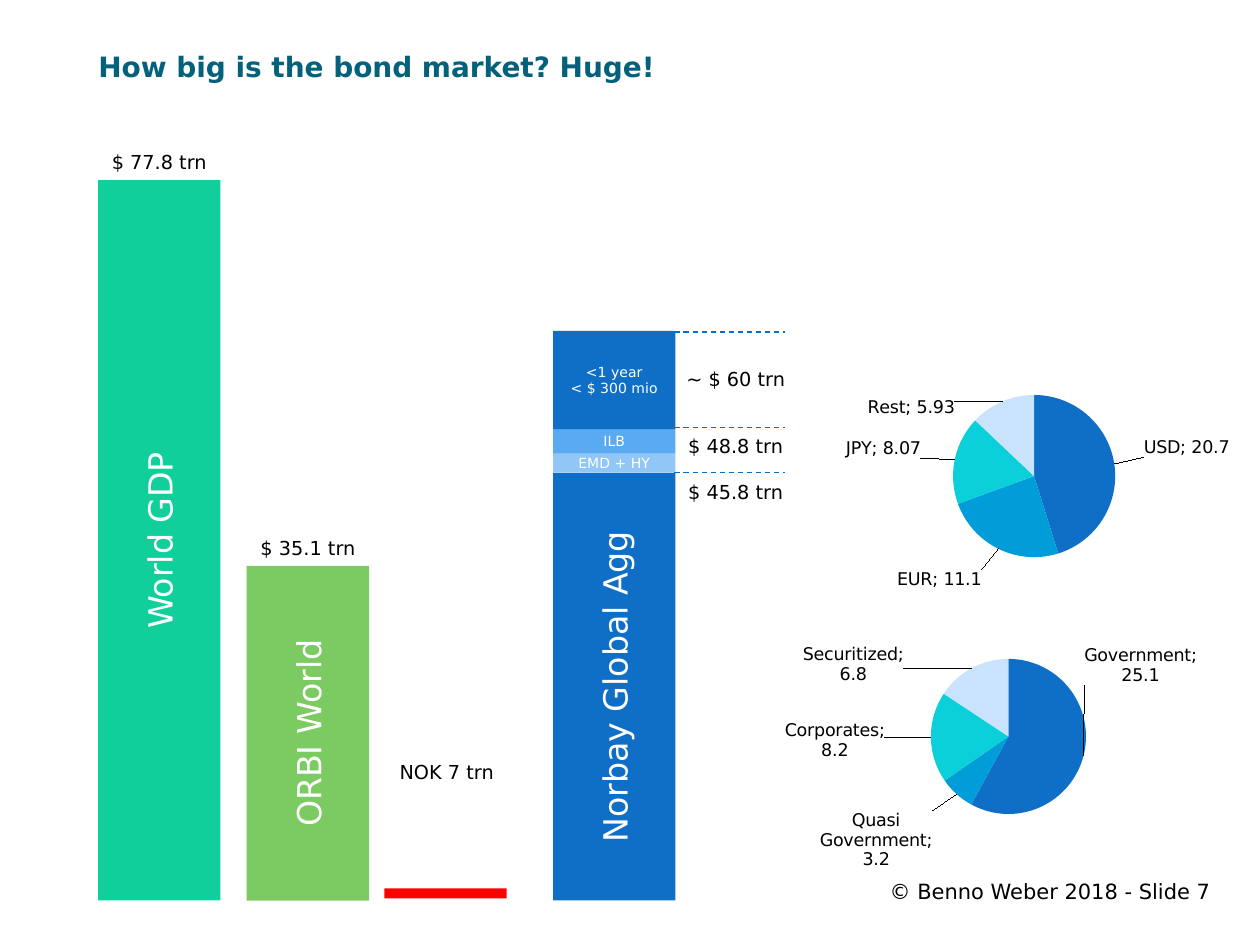
import pptx
import pptx.chart.data
import pptx.dml.color
import pptx.enum.chart
import pptx.enum.dml
import pptx.enum.shapes
import pptx.enum.text
import pptx.oxml
import pptx.oxml.ns
import pptx.util

Pt = pptx.util.Pt
RGBColor = pptx.dml.color.RGBColor
Align = pptx.enum.text.PP_ALIGN
Anchor = pptx.enum.text.MSO_ANCHOR
qn = pptx.oxml.ns.qn

FONT = "DejaVu Sans"
BLACK = RGBColor(0x00, 0x00, 0x00)
WHITE = RGBColor(0xFF, 0xFF, 0xFF)
TEAL = RGBColor(0x04, 0x61, 0x7B)
MINT = RGBColor(0x10, 0xCF, 0x9B)
GREEN = RGBColor(0x7C, 0xCA, 0x62)
RED = RGBColor(0xFF, 0x00, 0x00)
BLUE = RGBColor(0x0F, 0x6F, 0xC6)
MID_BLUE = RGBColor(0x59, 0xAA, 0xF2)
LIGHT_BLUE = RGBColor(0x91, 0xC6, 0xF7)
DASH_BLUE = RGBColor(0x0A, 0x6D, 0xC6)
PIE_COLORS = [BLUE, RGBColor(0x00, 0x9D, 0xD9), RGBColor(0x0B, 0xD0, 0xD9),
              RGBColor(0xC8, 0xE3, 0xFB)]

BASELINE = 514.6
BAR_WIDTH = 70
BOND_LEFT = 316


def write(frame, text, size, color, align, bold=False):
    frame.word_wrap = True
    para = frame.paragraphs[0]
    para.text = text
    para.alignment = align
    para.font.name = FONT
    para.font.size = Pt(size)
    para.font.bold = bold
    para.font.color.rgb = color


def add_text(page, text, left, top, width, height, size, color=BLACK,
             align=Align.CENTER, bold=False, inset=(0, 3.6)):
    box = page.shapes.add_textbox(Pt(left), Pt(top), Pt(width), Pt(height))
    frame = box.text_frame
    frame.margin_left = frame.margin_right = Pt(inset[0])
    frame.margin_top = frame.margin_bottom = Pt(inset[1])
    write(frame, text, size, color, align, bold)


def add_amount(page, text, left, top, width=BAR_WIDTH):
    add_text(page, text, left, top, width, 20.6, 11)


def add_bar(page, left, bottom, height, color, text="", size=19, vertical=False):
    bar = page.shapes.add_shape(pptx.enum.shapes.MSO_SHAPE.RECTANGLE, Pt(left),
                                Pt(bottom - height), Pt(BAR_WIDTH), Pt(height))
    bar.shadow.inherit = False
    bar.fill.solid()
    bar.fill.fore_color.rgb = color
    bar.line.fill.background()
    if text:
        bar.text_frame.vertical_anchor = Anchor.MIDDLE
        write(bar.text_frame, text, size, WHITE, Align.CENTER)
    if vertical:
        bar.text_frame._txBody.find(qn("a:bodyPr")).set("vert", "vert270")


def add_dash(page, left, top, width):
    line = page.shapes.add_connector(pptx.enum.shapes.MSO_CONNECTOR.STRAIGHT,
                                     Pt(left), Pt(top), Pt(left + width), Pt(top))
    line.line.color.rgb = DASH_BLUE
    line.line.width = Pt(0.75)
    line.line.dash_style = pptx.enum.dml.MSO_LINE.DASH
    line._element.spPr.append(pptx.oxml.parse_xml(
        f"<a:effectLst {pptx.oxml.ns.nsdecls('a')}/>"))


def layout_xml(values, target=""):
    items = target + "".join(f'<c:{key} val="{value}"/>' for key, value in values.items())
    return pptx.oxml.parse_xml(f"<c:layout {pptx.oxml.ns.nsdecls('c')}>"
                               f"<c:manualLayout>{items}</c:manualLayout></c:layout>")


def show_category(labels):
    labels.find(qn("c:showVal")).set("val", "1")
    labels.find(qn("c:showCatName")).set("val", "1")
    separator = pptx.oxml.parse_xml(
        f"<c:separator {pptx.oxml.ns.nsdecls('c')}>; </c:separator>")
    labels.find(qn("c:showBubbleSize")).addnext(separator)


def add_pie(page, frame, plot_area, slices, custom_labels):
    data = pptx.chart.data.CategoryChartData()
    data.categories = [name for name, value, offset in slices]
    data.add_series("Series 1", [value for name, value, offset in slices])
    chart = page.shapes.add_chart(pptx.enum.chart.XL_CHART_TYPE.PIE,
                                  *[Pt(length) for length in frame], data).chart
    chart.has_legend = False
    chart.has_title = False
    chart.font.name = FONT
    chart.font.size = Pt(10)
    chart.font.color.rgb = BLACK
    chart.plots[0].vary_by_categories = True

    area = chart._chartSpace.chart.plotArea
    for old in area.findall(qn("c:layout")):
        area.remove(old)
    area.insert(0, layout_xml(
        dict(zip("xywh", plot_area)),
        '<c:layoutTarget val="inner"/><c:xMode val="edge"/><c:yMode val="edge"/>'))

    series = chart.plots[0].series[0]
    labels = series.data_labels
    labels.position = pptx.enum.chart.XL_LABEL_POSITION.OUTSIDE_END
    show_category(labels._element)
    for index, (name, value, offset) in enumerate(slices):
        point = series.points[index]
        point.format.fill.solid()
        point.format.fill.fore_color.rgb = PIE_COLORS[index]
        point.format.line.fill.background()
        label = point.data_label
        if name in custom_labels:
            write(label.text_frame, custom_labels[name], 10, BLACK, Align.CENTER)
        label.position = pptx.enum.chart.XL_LABEL_POSITION.OUTSIDE_END
        element = labels._element.findall(qn("c:dLbl"))[index]
        show_category(element)
        element.find(qn("c:idx")).addnext(layout_xml(dict(zip("xy", offset))))


def add_bond_stack(page):
    bottom = BASELINE
    for height, color, text, size in [
            (244.4, BLUE, "Norbay Global Agg", 19),
            (11, LIGHT_BLUE, "EMD + HY", 8),
            (14, MID_BLUE, "ILB", 8),
            (56.2, BLUE, "<1 year\n< $ 300 mio", 8)]:
        add_bar(page, BOND_LEFT, bottom, height, color, text, size, size == 19)
        bottom -= height
    for text, text_top, dash_top in [("$ 45.8 trn", 270.7, 270),
                                     ("$ 48.8 trn", 244.8, 244.2),
                                     ("∼ $ 60 trn", 206.6, 189.8)]:
        add_amount(page, text, 385.4, text_top)
        add_dash(page, 385.4, dash_top, 63)


def main():
    deck = pptx.Presentation()
    deck.slide_width, deck.slide_height = Pt(720), Pt(540)
    page = deck.slides.add_slide(deck.slide_layouts[6])
    add_text(page, "© Benno Weber 2018 - Slide 7", 392.4, 496, 305.3, 26, 12,
             align=Align.RIGHT, inset=(6, 6))
    add_text(page, "How big is the bond market? Huge!", 50.2, 22.3, 643, 33, 16,
             TEAL, Align.LEFT, True, (6, 6))
    for left, height, color, name, amount in [
            (56, 411.6, MINT, "World GDP", "$ 77.8 trn"),
            (141, 191.2, GREEN, "ORBI World", "$ 35.1 trn")]:
        add_bar(page, left, BASELINE, height, color, name, vertical=True)
        add_amount(page, amount, left, BASELINE - height - 20.6)
    add_bond_stack(page)
    add_pie(page, (395.3, 344.2, 369.4, 159.8), (0.37, 0.2, 0.24, 0.56), [
        ("Government", 25.1, (-0.01, -0.4)),
        ("Govt.-related", 3.2, (-0.03, 0.04)),
        ("Corporates", 8.2, (-0.06, 0.01)),
        ("Securitized", 6.8, (-0.1, 0.08))],
        {"Govt.-related": "Quasi Government; 3.2"})
    add_pie(page, (455, 192.2, 254.2, 159.8), (0.35, 0.21, 0.37, 0.58), [
        ("USD", 20.7, (0.05, -0.02)),
        ("EUR", 11.1, (-0.03, 0.05)),
        ("JPY", 8.07, (-0.06, 0)),
        ("Rest", 5.93, (-0.1, 0.08))], {})
    add_bar(page, 219.6, 513.4, 5.8, RED)
    add_amount(page, "NOK 7 trn", 214.6, 430.6, 81.4)
    deck.save("out.pptx")


if __name__ == "__main__":
    main()
